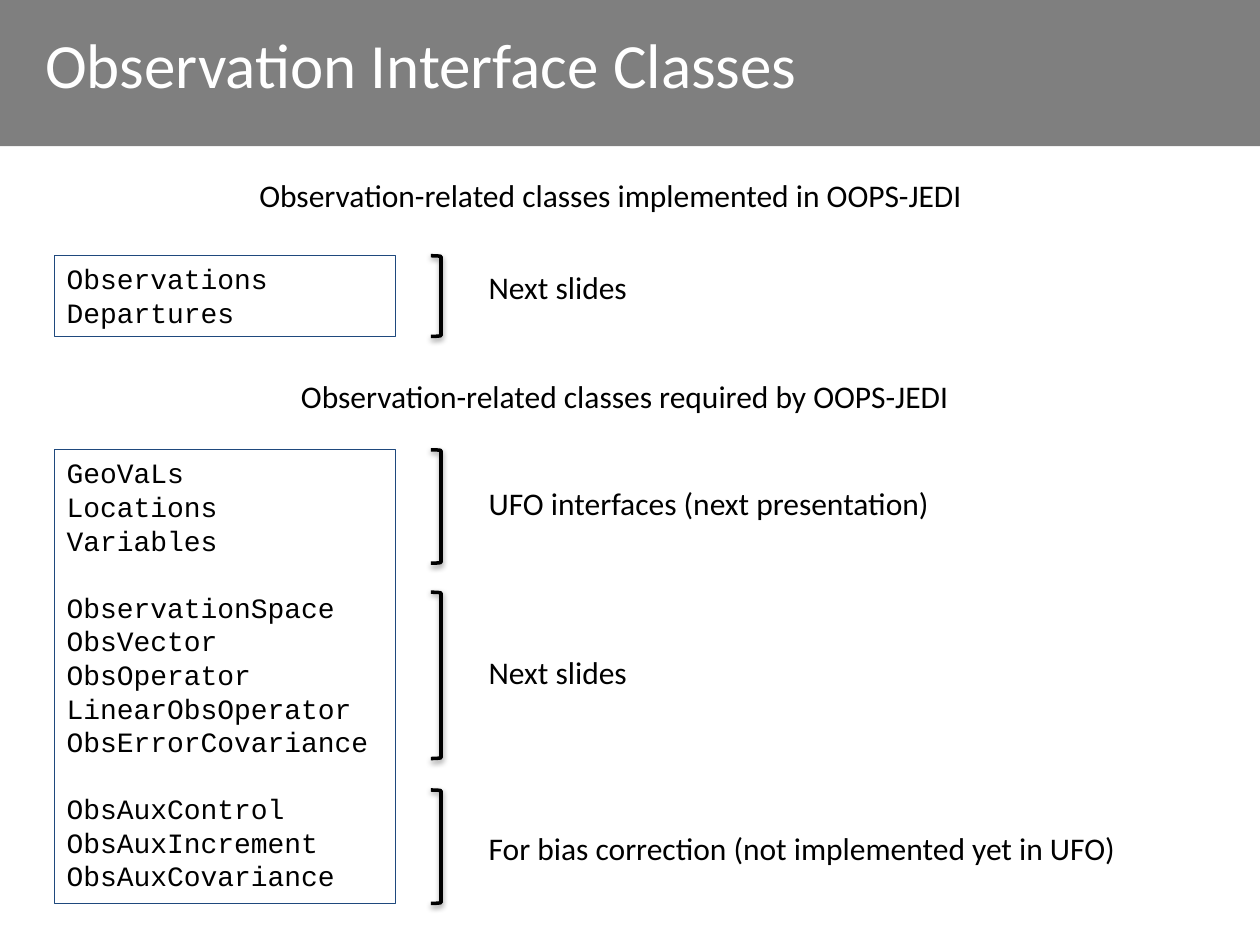
"""Build the slide listing the observation interface classes."""
from lxml import etree
from pptx import Presentation
from pptx import util as u
from pptx.dml.color import RGBColor
from pptx.enum import shapes, text
from pptx.oxml import ns

COLORS = {"black": "000000", "white": "FFFFFF", "navy": "1F497D"}
COLS = {"box": 0.43, "bracket": 3.42, "label": 3.78}
BOX_W, BRACKET_W, LABEL_H = 2.71, 0.08, 0.4
LINE = u.Pt(19.2)

HEADINGS = [
    (1.96, 1.35, 6.07, "Observation-related classes implemented in OOPS-JEDI"),
    (2.29, 2.94, 5.42, "Observation-related classes required by OOPS-JEDI"),
]
BOXES = [
    (2.03, 0.64, [["Observations", "Departures"]]),
    (3.57, 3.6, [
        ["GeoVaLs", "Locations", "Variables"],
        ["ObservationSpace", "ObsVector", "ObsOperator", "LinearObsOperator",
         "ObsErrorCovariance"],
        ["ObsAuxControl", "ObsAuxIncrement", "ObsAuxCovariance"],
    ]),
]
BRACKETS = [
    (2.03, 0.64, 2.08, 1.31, "Next slides"),
    (3.57, 0.9, 3.79, 3.76, "UFO interfaces (next presentation)"),
    (4.7, 1.32, 5.13, 1.31, "Next slides"),
    (6.27, 0.9, 6.53, 5.25, "For bias correction (not implemented yet in UFO)"),
]
SHADOW = (
    f'<a:effectLst {ns.nsdecls("a")}>'
    '<a:outerShdw blurRad="40000" dist="20000" dir="5400000" rotWithShape="0">'
    '<a:srgbClr val="000000"><a:alpha val="38000"/></a:srgbClr>'
    '</a:outerShdw></a:effectLst>'
)


def style(p, font, size, color):
    p.alignment = text.PP_ALIGN.LEFT
    p.font.name, p.font.size = font, u.Pt(size)
    p.font.color.rgb = RGBColor.from_string(COLORS[color])


def add_outline(kind, x, y, w, h, color, weight):
    sp = s.shapes.add_shape(kind, *map(u.Inches, (x, y, w, h)))
    sp.shadow.inherit = False
    sp.fill.background()
    sp.line.color.rgb = RGBColor.from_string(COLORS[color])
    sp.line.width = u.Pt(weight)
    return sp


prs = Presentation()
prs.slide_width, prs.slide_height = u.Inches(10), u.Inches(7.5)
s = prs.slides.add_slide(prs.slide_layouts[5])

band = s.shapes.add_shape(shapes.MSO_SHAPE.RECTANGLE, 0, 0, prs.slide_width, u.Inches(1.16))
band.shadow.inherit = False
band.line.fill.background()
band.fill.solid()
band.fill.fore_color.rgb = RGBColor.from_string(COLORS["black"])
fill_color = band._element.spPr.find(ns.qn("a:solidFill"))[0]
etree.SubElement(fill_color, ns.qn("a:alpha"), val="50000")
s.shapes._spTree.insert(2, band._element)

title = s.shapes.title
title.left, title.top, title.width, title.height = map(u.Inches, (0.26, 0, 8.31, 1))
title.text_frame.text = "Observation Interface Classes"
title.text_frame.vertical_anchor = text.MSO_ANCHOR.MIDDLE
style(title.text_frame.paragraphs[0], "Calibri", 36, "white")

for y, h, groups in BOXES:
    box = add_outline(shapes.MSO_SHAPE.RECTANGLE, COLS["box"], y, BOX_W, h, "navy", 0.75)
    tf = box.text_frame
    tf.word_wrap = True
    tf.vertical_anchor = text.MSO_ANCHOR.TOP
    tf.text = "\n".join(name for group in groups for name in group)
    starts = [group[0] for group in groups[1:]]
    for p in tf.paragraphs:
        style(p, "Courier New", 16, "black")
        p.line_spacing = LINE
        if p.text in starts:
            p.space_before = LINE

labels = list(HEADINGS)
for y, h, label_y, label_w, label in BRACKETS:
    bracket = add_outline(shapes.MSO_SHAPE.RIGHT_BRACKET, COLS["bracket"], y, BRACKET_W, h,
                          "black", 2)
    spPr = bracket._element.spPr
    spPr.replace(spPr.find(ns.qn("a:effectLst")), etree.fromstring(SHADOW))
    labels.append((COLS["label"], label_y, label_w, label))

for x, y, w, label in labels:
    tf = s.shapes.add_textbox(*map(u.Inches, (x, y, w, LABEL_H))).text_frame
    tf.word_wrap = False
    tf.auto_size = text.MSO_AUTO_SIZE.SHAPE_TO_FIT_TEXT
    tf.text = label
    style(tf.paragraphs[0], "Calibri", 18, "black")

prs.save("out.pptx")
